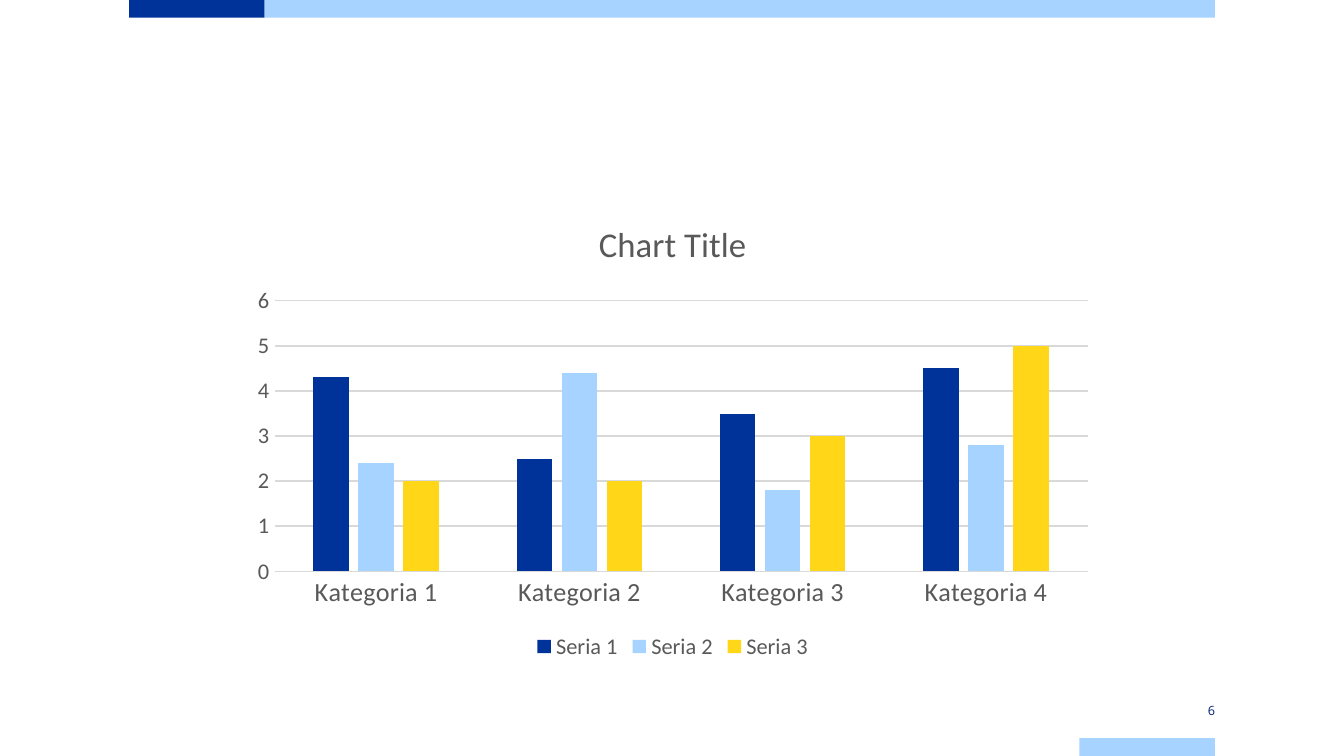
from pptx import Presentation
from pptx.chart.data import CategoryChartData as ChartData
from pptx.dml.color import RGBColor as Rgb
from pptx.enum.chart import XL_CHART_TYPE as Kind, XL_LEGEND_POSITION as Spot
from pptx.enum.chart import XL_TICK_MARK as Tick
from pptx.enum.shapes import MSO_SHAPE as Shape
from pptx.enum.text import MSO_ANCHOR as Anchor, PP_ALIGN as Align
from pptx.util import Pt

COLORS = {
    "navy": "003399",
    "sky": "A6D3FF",
    "gold": "FFD618",
    "gray": "595959",
    "grid": "D9D9D9",
    "ink": "002073",
}
SERIES = [
    ("Seria 1", "navy", (4.3, 2.5, 3.5, 4.5)),
    ("Seria 2", "sky", (2.4, 4.4, 1.8, 2.8)),
    ("Seria 3", "gold", (2, 2, 3, 5)),
]
WIDTH, HEIGHT = 720, 405
LEFT, RIGHT = 69.1, 650.9
TAB, BAND = 72.7, 9.5


def tint(name):
    return Rgb.from_string(COLORS[name])


def style(font, size, color="gray", face="Calibri"):
    font.size = Pt(size)
    font.name = face
    font.bold = False
    font.color.rgb = tint(color)


def add_bar(slide, left, top, width, color):
    bar = slide.shapes.add_shape(
        Shape.RECTANGLE, Pt(left), Pt(top), Pt(width), Pt(BAND))
    bar.shadow.inherit = False
    bar.fill.solid()
    bar.fill.fore_color.rgb = tint(color)
    bar.line.fill.background()


def set_axis(axis, size):
    axis.major_tick_mark = axis.minor_tick_mark = Tick.NONE
    style(axis.tick_labels.font, size)


def set_line(line):
    line.color.rgb = tint("grid")
    line.width = Pt(0.75)


def add_chart(slide):
    data = ChartData()
    data.categories = [f"Kategoria {n}" for n in range(1, 5)]
    for name, _, vals in SERIES:
        data.add_series(name, vals)
    chart = slide.shapes.add_chart(
        Kind.COLUMN_CLUSTERED, Pt(128.9), Pt(105.8), Pt(463), Pt(250.6), data).chart
    style(chart.font, 10)

    title = chart.chart_title.text_frame
    title.text = "Chart Title"
    style(title.paragraphs[0].runs[0].font, 18.6)
    chart.chart_title.include_in_layout = False

    set_axis(chart.category_axis, 14)
    set_line(chart.category_axis.format.line)
    vals = chart.value_axis
    set_axis(vals, 12)
    vals.minimum_scale, vals.maximum_scale, vals.major_unit = 0, 6, 1
    vals.format.line.fill.background()
    set_line(vals.major_gridlines.format.line)

    chart.has_legend = True
    chart.legend.position = Spot.BOTTOM
    chart.legend.include_in_layout = False
    style(chart.legend.font, 12)

    plot = chart.plots[0]
    plot.gap_width, plot.overlap = 219, -27
    plot.vary_by_categories = False
    for item, (_, color, _) in zip(plot.series, SERIES):
        item.format.fill.solid()
        item.format.fill.fore_color.rgb = tint(color)


def add_number(slide, text):
    box = slide.shapes.add_textbox(Pt(RIGHT - TAB), Pt(376), Pt(TAB), Pt(BAND))
    frame = box.text_frame
    frame.word_wrap = True
    frame.vertical_anchor = Anchor.MIDDLE
    frame.margin_left = frame.margin_right = 0
    frame.margin_top = frame.margin_bottom = Pt(5.8)
    frame.text = text
    line = frame.paragraphs[0]
    line.alignment = Align.RIGHT
    style(line.runs[0].font, 6.8, "ink", "Open Sans")


def main():
    deck = Presentation()
    deck.slide_width, deck.slide_height = Pt(WIDTH), Pt(HEIGHT)
    slide = deck.slides.add_slide(deck.slide_layouts[6])
    add_bar(slide, LEFT, 0, TAB, "navy")
    add_bar(slide, LEFT + TAB, 0, RIGHT - LEFT - TAB, "sky")
    add_bar(slide, RIGHT - TAB, HEIGHT - BAND, TAB, "sky")
    add_chart(slide)
    add_number(slide, "6")
    deck.save("out.pptx")


if __name__ == "__main__":
    main()
